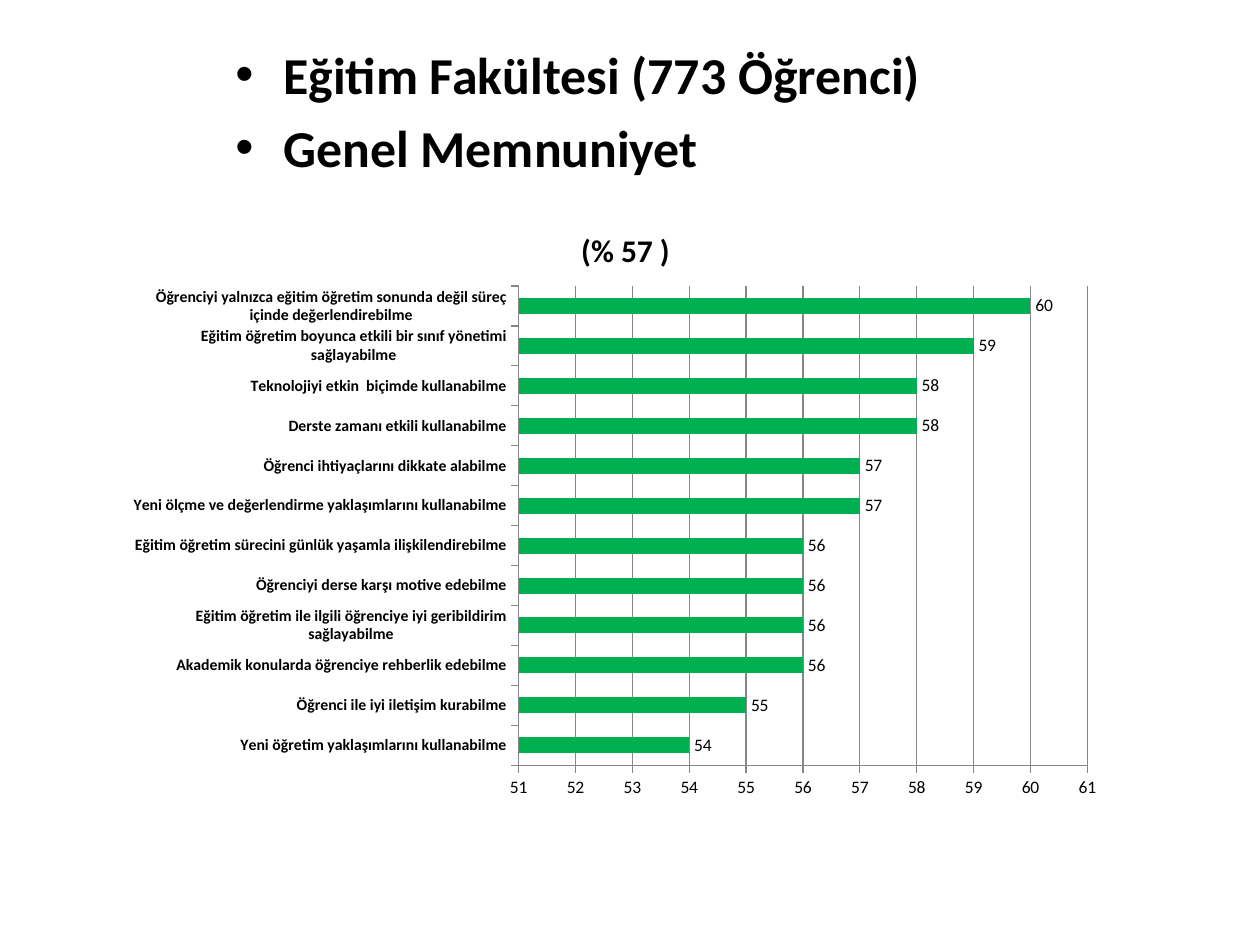
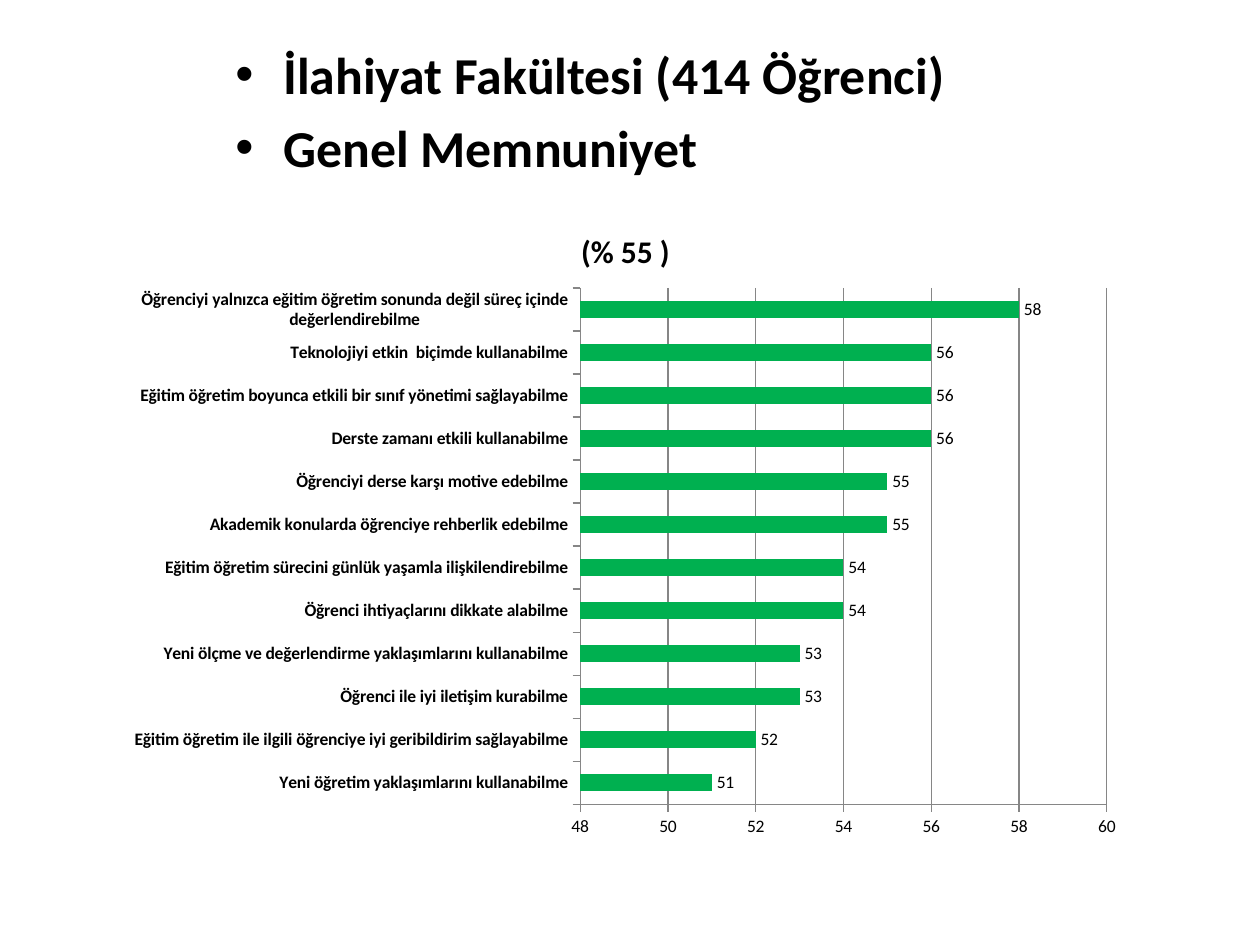
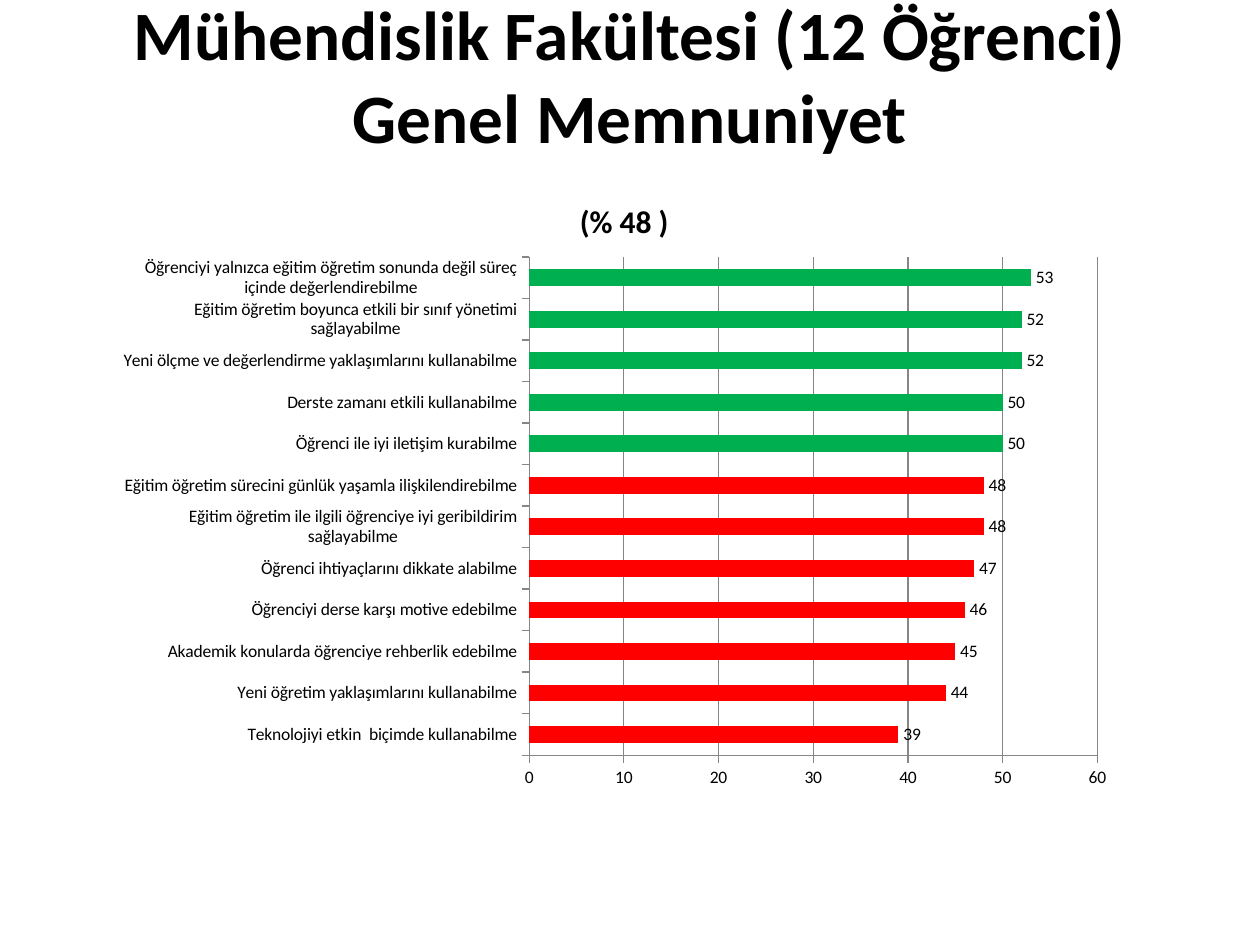
from dataclasses import dataclass
from lxml.etree import SubElement
from pptx import Presentation
from pptx.chart.data import CategoryChartData
from pptx.dml.color import RGBColor
from pptx.enum.chart import XL_CHART_TYPE, XL_LABEL_POSITION, XL_TICK_MARK
from pptx.enum.text import MSO_ANCHOR, PP_ALIGN
from pptx.oxml.ns import qn
from pptx.util import Inches, Pt


@dataclass(frozen=True)
class Theme:
    face: str = "Calibri"
    ink: RGBColor = RGBColor(0, 0, 0)
    paper: RGBColor = RGBColor(255, 255, 255)
    grid: RGBColor = RGBColor(0x86, 0x86, 0x86)
    good: RGBColor = RGBColor(0x00, 0xB0, 0x50)
    poor: RGBColor = RGBColor(0xFF, 0x00, 0x00)
    title: float = 39.6
    list: float = 29.6
    head: float = 18
    note: float = 10
    small: float = 9
    line: float = 0.75


THEME = Theme()
WIDE, HIGH = Inches(10), Inches(7.5)
COLS, ROWS = 100, 75
LIST_BOX = (17.7, 2.9, 65.4, 11.8)
TITLE_BOX = (5, 3, 90, 12.5)
PASS = 50
MOOD = "Genel Memnuniyet"

SKILLS = {
    "new": "Yeni öğretim yaklaşımlarını kullanabilme",
    "talk": "Öğrenci ile iyi iletişim kurabilme",
    "guide": "Akademik konularda öğrenciye rehberlik edebilme",
    "reply": "Eğitim öğretim ile ilgili öğrenciye iyi geribildirim sağlayabilme",
    "drive": "Öğrenciyi derse karşı motive edebilme",
    "life": "Eğitim öğretim sürecini günlük yaşamla ilişkilendirebilme",
    "test": "Yeni ölçme ve değerlendirme yaklaşımlarını kullanabilme",
    "need": "Öğrenci ihtiyaçlarını dikkate alabilme",
    "time": "Derste zamanı etkili kullanabilme",
    "tech": "Teknolojiyi etkin  biçimde kullanabilme",
    "class": "Eğitim öğretim boyunca etkili bir sınıf yönetimi sağlayabilme",
    "grade": "Öğrenciyi yalnızca eğitim öğretim sonunda değil süreç içinde değerlendirebilme",
}


def place(box):
    left, top, width, height = box
    return (int(WIDE * left / COLS), int(HIGH * top / ROWS),
            int(WIDE * width / COLS), int(HIGH * height / ROWS))


def style(font, size, bold=False):
    font.name, font.size, font.bold = THEME.face, Pt(size), bold
    font.color.rgb = THEME.ink


def add_run(para, text, size):
    run = para.add_run()
    run.text = text
    style(run.font, size, True)


def add_frame(slide, box):
    frame = slide.shapes.add_textbox(*place(box)).text_frame
    frame.word_wrap = True
    return frame


def add_list(slide, box, lines):
    frame = add_frame(slide, box)
    for i, line in enumerate(lines):
        para = frame.add_paragraph() if i else frame.paragraphs[0]
        para.space_before = Pt(THEME.list / 5)
        add_run(para, line, THEME.list)
        props = para._p.get_or_add_pPr()
        props.set("marL", str(Inches(0.38)))
        props.set("indent", str(-Inches(0.38)))
        SubElement(props, qn("a:buFont")).set("typeface", "Arial")
        SubElement(props, qn("a:buChar")).set("char", "•")


def add_title(slide, box, lines):
    frame = add_frame(slide, box)
    frame.vertical_anchor = MSO_ANCHOR.MIDDLE
    frame.margin_bottom = Inches(0.72)
    para = frame.paragraphs[0]
    para.alignment = PP_ALIGN.CENTER
    for i, line in enumerate(lines):
        if i:
            para.add_line_break()
        add_run(para, line, THEME.title)


def shade(score):
    return THEME.good if score >= PASS else THEME.poor


def paint(fill, tint):
    fill.solid()
    fill.fore_color.rgb = tint


def draw(line):
    line.color.rgb = THEME.grid
    line.width = Pt(THEME.line)


def pin_plot(chart, box, inner):
    area = chart._chartSpace.find(".//" + qn("c:plotArea"))
    for old in area.findall(qn("c:layout")):
        area.remove(old)
    frame = SubElement(area, qn("c:layout"))
    area.insert(0, frame)
    manual = SubElement(frame, qn("c:manualLayout"))
    left, top, width, height = box
    x, y, w, h = inner
    for tag, val in (
            ("layoutTarget", "inner"), ("xMode", "edge"), ("yMode", "edge"),
            ("x", (x - left) / width), ("y", (y - top) / height),
            ("w", w / width), ("h", h / height)):
        SubElement(manual, qn("c:" + tag)).set("val", str(val))


def show_names(names):
    skip = SubElement(names._element, qn("c:tickLblSkip"))
    skip.set("val", "1")
    names._element.find(qn("c:noMultiLvlLbl")).addprevious(skip)


def add_bars(slide, box, inner, head, scores, scale, size, bold):
    data = CategoryChartData(number_format="0")
    data.categories = [SKILLS[key] for key in scores]
    marks = list(scores.values())
    data.add_series("Series 1", marks)
    chart = slide.shapes.add_chart(
        XL_CHART_TYPE.BAR_CLUSTERED, *place(box), data).chart
    style(chart.font, THEME.note)
    chart.has_legend = False
    chart.has_title = True
    add_run(chart.chart_title.text_frame.paragraphs[0], head, THEME.head)
    chart.chart_title.include_in_layout = False
    pin_plot(chart, box, inner)

    names, axis = chart.category_axis, chart.value_axis
    for each in (names, axis):
        each.major_tick_mark = XL_TICK_MARK.OUTSIDE
        each.minor_tick_mark = XL_TICK_MARK.NONE
        draw(each.format.line)
    style(names.tick_labels.font, size, bold)
    show_names(names)
    style(axis.tick_labels.font, THEME.note)
    axis.minimum_scale, axis.maximum_scale, axis.major_unit = scale
    axis.has_major_gridlines = True
    draw(axis.major_gridlines.format.line)
    axis.tick_labels.number_format = "0"
    axis.tick_labels.number_format_is_linked = False

    plot = chart.plots[0]
    plot.gap_width = 150
    plot.vary_by_categories = False
    bars = plot.series[0]
    bars.invert_if_negative = False
    base = shade(marks[0])
    paint(bars.format.fill, base)
    for i, mark in enumerate(marks):
        if shade(mark) != base:
            paint(bars.points[i].format.fill, shade(mark))
    plot.has_data_labels = True
    tags = plot.data_labels
    tags.show_value = True
    tags.number_format = "0"
    tags.number_format_is_linked = False
    tags.position = XL_LABEL_POSITION.OUTSIDE_END
    style(tags.font, THEME.note)


def add_page(deck, top, text_box, name, *bars):
    slide = deck.slides.add_slide(deck.slide_layouts[6])
    paint(slide.background.fill, THEME.paper)
    top(slide, text_box, (name, MOOD))
    add_bars(slide, *bars)


def main():
    deck = Presentation()
    deck.slide_width, deck.slide_height = WIDE, HIGH
    add_page(
        deck, add_list, LIST_BOX, "Eğitim Fakültesi (773 Öğrenci)",
        (10.6, 16.2, 78, 48), (41.1, 22.7, 45.2, 38.05), "(% 57 )",
        {"new": 54, "talk": 55, "guide": 56, "reply": 56, "drive": 56,
         "life": 56, "test": 57, "need": 57, "time": 58, "tech": 58,
         "class": 59, "grade": 60},
        (51, 61, 1), THEME.small, True)
    add_page(
        deck, add_list, LIST_BOX, "İlahiyat Fakültesi (414 Öğrenci)",
        (9.1, 16.2, 81.1, 51.2), (46.05, 22.85, 41.8, 41), "(% 55 )",
        {"new": 51, "reply": 52, "talk": 53, "test": 53, "need": 54,
         "life": 54, "guide": 55, "drive": 55, "time": 56, "class": 56,
         "tech": 56, "grade": 58},
        (48, 60, 2), THEME.note, True)
    add_page(
        deck, add_title, TITLE_BOX, "Mühendislik Fakültesi (12 Öğrenci)",
        (9.8, 13.9, 79.5, 49.6), (42, 20.4, 45.1, 39.55), "(% 48 )",
        {"tech": 39, "new": 44, "guide": 45, "drive": 46, "need": 47,
         "reply": 48, "life": 48, "talk": 50, "time": 50, "test": 52,
         "class": 52, "grade": 53},
        (0, 60, 10), THEME.note, False)
    deck.save("out.pptx")


if __name__ == "__main__":
    main()
